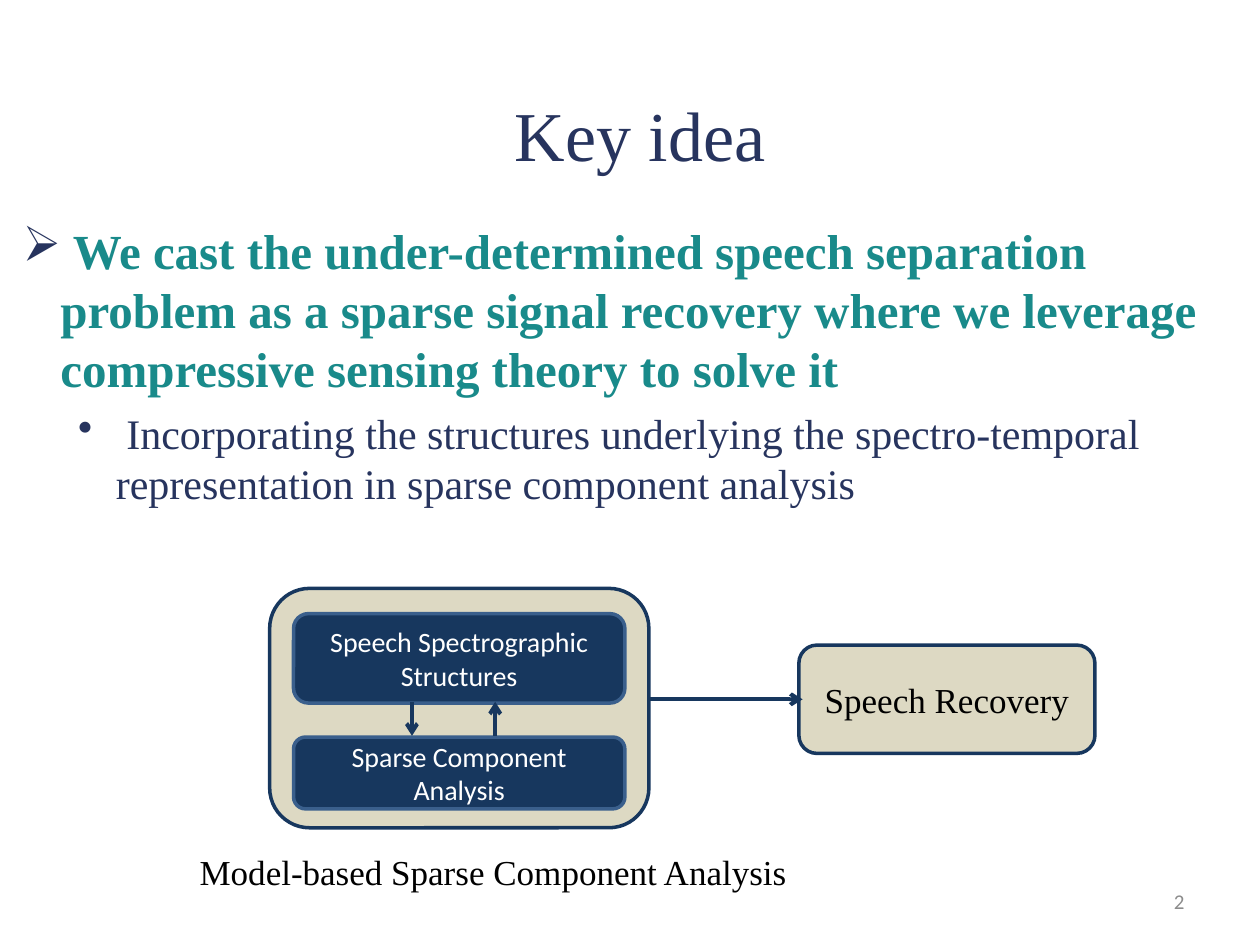
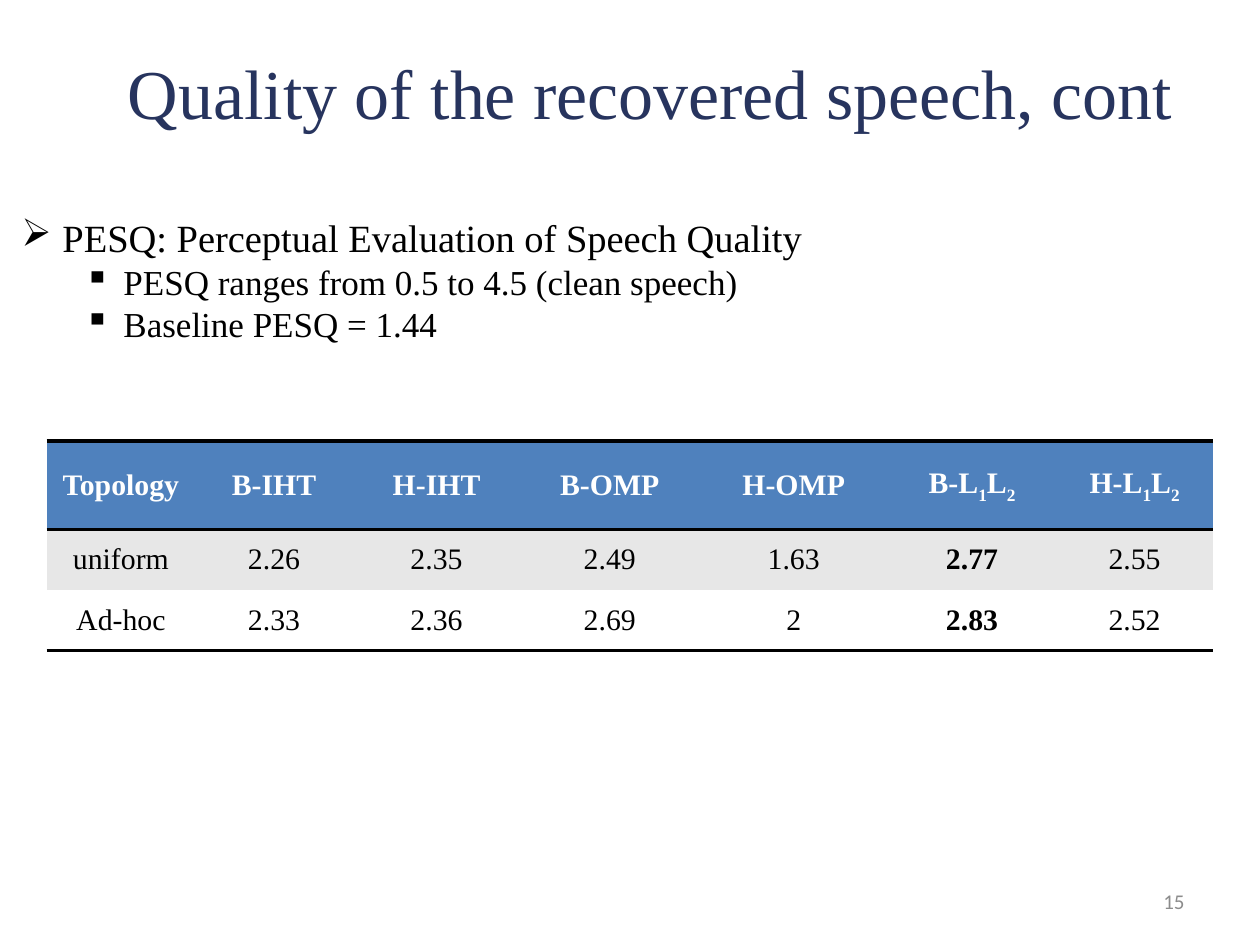
from dataclasses import dataclass
from lxml import etree
from pptx import Presentation, util as u
from pptx.dml.color import RGBColor
from pptx.enum import shapes, text
from pptx.oxml import ns

In = u.Inches


@dataclass(frozen=True)
class Theme:
    serif: str = "Times New Roman"
    sans: str = "Calibri"
    indigo: str = "27345E"
    teal: str = "198A8A"
    navy: str = "17375E"
    edge: str = "3A5F8C"
    sand: str = "DDD9C3"
    blue: str = "4F81BD"
    band: str = "E7E7E7"
    gray: str = "8C8C8C"
    black: str = "000000"
    white: str = "FFFFFF"
    title: int = 40
    lead: int = 28
    point: int = 24
    item: int = 22
    label: int = 20
    cell: int = 17
    block: int = 16
    number: int = 12


T = Theme()
LEFT, CENTER, RIGHT = (text.PP_ALIGN.LEFT, text.PP_ALIGN.CENTER,
                       text.PP_ALIGN.RIGHT)
TOP, MIDDLE = text.MSO_ANCHOR.TOP, text.MSO_ANCHOR.MIDDLE


def rgb(color):
    return RGBColor.from_string(color)


def child(parent, tag, **attrs):
    return etree.SubElement(parent, ns.qn(tag), attrs)


def add_run(p, words, size, color, font=T.serif, bold=False):
    r = p.add_run()
    r.text = words
    r.font.size, r.font.name, r.font.bold = u.Pt(size), font, bold
    r.font.color.rgb = rgb(color)
    return r


def add_bullet(p, char, color, left, hang):
    pPr = p._p.get_or_add_pPr()
    pPr.set("marL", str(In(left)))
    pPr.set("indent", str(-In(hang)))
    child(child(pPr, "a:buClr"), "a:srgbClr", val=color)
    child(pPr, "a:buChar", char=char)


def add_box(s, x, y, w, h, anchor=TOP, inset=0.0):
    """Empty wrapping text box; returns its frame."""
    tf = s.shapes.add_textbox(In(x), In(y), In(w), In(h)).text_frame
    tf.word_wrap, tf.vertical_anchor = True, anchor
    tf.margin_left = tf.margin_right = In(inset)
    tf.margin_top = tf.margin_bottom = In(inset / 2)
    return tf


def add_line(s, x, y, w, h, words, size, color, align, font=T.serif,
             anchor=MIDDLE):
    """One-line label in a box."""
    p = add_box(s, x, y, w, h, anchor, 0.1).paragraphs[0]
    p.alignment = align
    add_run(p, words, size, color, font)


# Shared parts: title and slide number
def new_slide(prs, title, x, y, w, number):
    s = prs.slides.add_slide(prs.slide_layouts[6])
    add_line(s, x, y, w, 0.74, title, T.title, T.indigo, CENTER, anchor=TOP)
    add_line(s, 7.17, 6.95, 2.33, 0.4, number, T.number, T.gray, RIGHT, T.sans)
    return s


# Bulleted text: each item is (bullet, left, hang, before, words, size, color, bold)
def add_bullets(s, x, y, w, h, items):
    tf = add_box(s, x, y, w, h)
    for i, (char, left, hang, before, words, size, color, bold) in enumerate(items):
        p = tf.add_paragraph() if i else tf.paragraphs[0]
        p.space_before = u.Pt(before)
        add_bullet(p, char, T.indigo if color != T.black else color, left, hang)
        add_run(p, words, size, color, bold=bold)


# Block diagram
def add_block(s, x, y, w, h, fill, edge, words="", size=T.block,
              color=T.white, font=T.sans):
    sp = s.shapes.add_shape(shapes.MSO_SHAPE.ROUNDED_RECTANGLE,
                            In(x), In(y), In(w), In(h))
    sp.shadow.inherit = False
    sp.fill.solid()
    sp.fill.fore_color.rgb = rgb(fill)
    sp.line.color.rgb, sp.line.width = rgb(edge), u.Pt(2)
    if words:
        tf = sp.text_frame
        tf.word_wrap, tf.vertical_anchor = True, MIDDLE
        tf.paragraphs[0].alignment = CENTER
        add_run(tf.paragraphs[0], words, size, color, font)


def add_arrow(s, x1, y1, x2, y2):
    c = s.shapes.add_connector(shapes.MSO_CONNECTOR.STRAIGHT,
                               In(x1), In(y1), In(x2), In(y2))
    c.line.color.rgb, c.line.width = rgb(T.navy), u.Pt(2.25)
    child(c.line._get_or_add_ln(), "a:tailEnd", type="arrow")
    child(c._element.spPr, "a:effectLst")


def add_diagram(s, x, y):
    add_block(s, x, y, 3.01, 1.9, T.sand, T.navy)
    add_block(s, x + 4.2, y + 0.45, 2.35, 0.86, T.sand, T.navy,
              "Speech Recovery", T.label, T.black, T.serif)
    for dy, h, words in ((0.2, 0.71, "Speech Spectrographic Structures"),
                         (1.18, 0.57, "Sparse Component Analysis")):
        add_block(s, x + 0.19, y + dy, 2.63, h, T.navy, T.edge, words)
    upper, lower = y + 0.9, y + 1.17
    add_arrow(s, x + 3, y + 0.88, x + 4.23, y + 0.88)
    add_arrow(s, x + 1.13, upper, x + 1.13, lower)
    add_arrow(s, x + 1.79, lower, x + 1.79, upper)
    add_line(s, x - 0.81, y + 2.03, 5.17, 0.44,
             "Model-based Sparse Component Analysis", T.label, T.black, CENTER)


# Score table
def set_borders(cell, top, bottom):
    tcPr = cell._tc.get_or_add_tcPr()
    for side, shown in (("L", False), ("R", False), ("T", top), ("B", bottom)):
        ln = child(tcPr, "a:ln" + side, w=str(u.Pt(2)))
        if shown:
            child(child(ln, "a:solidFill"), "a:srgbClr", val=T.black)
        else:
            child(ln, "a:noFill")


def fill_cell(cell, words, fill, color, bold):
    cell.fill.solid()
    cell.fill.fore_color.rgb = rgb(fill)
    cell.vertical_anchor = MIDDLE
    cell.margin_top, cell.margin_bottom = In(0.06), In(0.05)
    p = cell.text_frame.paragraphs[0]
    p.alignment, p.line_spacing = CENTER, 0.98
    # "_" marks the next character as a subscript
    first, *rest = words.split("_")
    add_run(p, first, T.cell, color, bold=bold)
    for part in rest:
        sub = add_run(p, part[0], T.cell, color, bold=bold)
        sub.font._element.set("baseline", "-25000")
        if part[1:]:
            add_run(p, part[1:], T.cell, color, bold=bold)


def add_scores(s, x, y, widths, heights, rows, best_col):
    tbl = s.shapes.add_table(len(rows), len(widths), In(x), In(y),
                             In(sum(widths)), In(sum(heights))).table
    tbl.first_row = tbl.horz_banding = False
    for col, w in zip(tbl.columns, widths):
        col.width = In(w)
    for i, (row, h) in enumerate(zip(rows, heights)):
        tbl.rows[i].height = In(h)
        head = i == 0
        fill = (T.blue, T.band, T.white)[i]
        for j, words in enumerate(row):
            cell = tbl.cell(i, j)
            set_borders(cell, top=i < 2, bottom=i != 1)
            fill_cell(cell, words, fill, T.white if head else T.black,
                      head or j == best_col)


def key_idea(prs):
    s = new_slide(prs, "Key idea", 0.58, 0.68, 9, "2")
    add_bullets(s, 0, 1.75, 10.07, 2.6, [
        ("➢", 0.48, 0.3, 0, " We cast the under-determined speech separation "
         "problem as a sparse signal recovery where we leverage compressive "
         "sensing theory to solve it", T.lead, T.teal, True),
        ("•", 0.92, 0.3, 6, " Incorporating the structures underlying the "
         "spectro-temporal representation in sparse component analysis",
         T.point, T.indigo, False)])
    add_diagram(s, 2.14, 4.67)


def speech_quality(prs):
    s = new_slide(prs, "Quality of the recovered speech, cont",
                  0.32, 0.34, 9.68, "15")
    add_bullets(s, 0.17, 1.7, 9.5, 1.2, [
        ("➢", 0.25, 0.25, 0, " PESQ: Perceptual Evaluation of Speech Quality",
         T.item, T.black, False)] + [
        ("▪", 0.81, 0.31, 0, words, T.label, T.black, False) for words in (
            "PESQ ranges from 0.5 to 4.5 (clean speech)",
            "Baseline PESQ = 1.44")])
    add_scores(s, 0.37, 3.5, [1.18, 1.25, 1.33, 1.42, 1.5, 1.33, 1.25],
               [0.7, 0.48, 0.48], [
        ["Topology", "B-IHT", "H-IHT", "B-OMP", "H-OMP", "B-L_1L_2", "H-L_1L_2"],
        ["uniform", "2.26", "2.35", "2.49", "1.63", "2.77", "2.55"],
        ["Ad-hoc", "2.33", "2.36", "2.69", "2", "2.83", "2.52"]], best_col=5)


def main():
    prs = Presentation()
    prs.slide_width, prs.slide_height = In(10), In(7.5)
    key_idea(prs)
    speech_quality(prs)
    prs.save("out.pptx")


if __name__ == "__main__":
    main()
